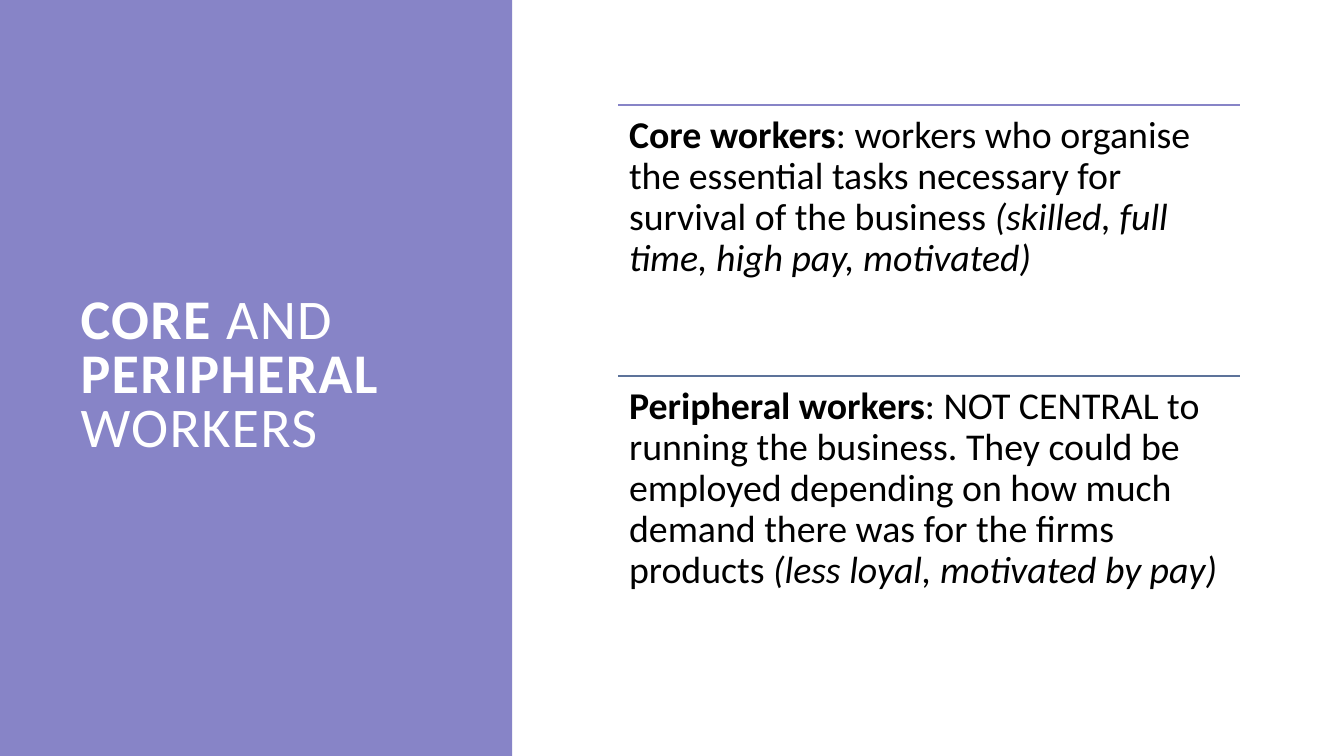
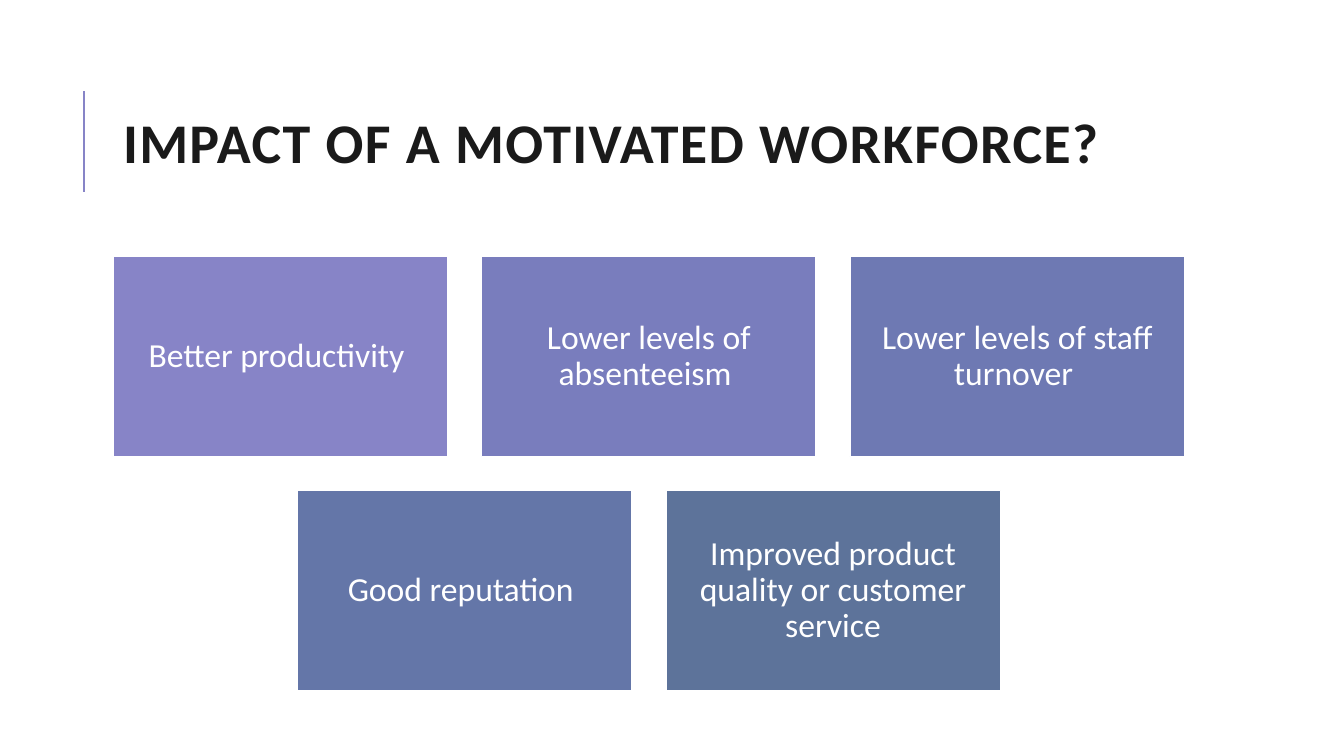
from dataclasses import dataclass

from lxml import etree
from pptx import Presentation
from pptx.dml.color import RGBColor
from pptx.enum import shapes, text
from pptx.oxml import ns
from pptx.util import Inches, Pt

FONT = "Calibri"
TITLE_ONLY = 5
COLORS = {
    "violet": "8784C7",
    "iris": "797DBD",
    "indigo": "6E79B3",
    "blue": "6476A8",
    "slate": "5D739A",
    "white": "FFFFFF",
    "black": "000000",
    "ink": "1A1A1A",
}


@dataclass(frozen=True)
class Box:
    left: float
    top: float
    width: float
    height: float

    def emu(self) -> tuple:
        return tuple(Inches(n) for n in (self.left, self.top, self.width, self.height))


@dataclass(frozen=True)
class Span:
    text: str
    bold: bool = False
    italic: bool = False


@dataclass(frozen=True)
class Style:
    size: int
    color: str
    line_spacing: float = 0.9
    align: text.PP_ALIGN = text.PP_ALIGN.LEFT
    anchor: text.MSO_ANCHOR = text.MSO_ANCHOR.MIDDLE
    inset: float = 0.1
    tracking: int = 0


@dataclass(frozen=True)
class Definition:
    color: str
    spans: tuple


@dataclass(frozen=True)
class Card:
    label: str
    color: str


DEFINITIONS = (
    Definition("violet", (
        Span("Core workers", bold=True),
        Span(": workers who organise the essential tasks necessary for "
             "survival of the business "),
        Span("(skilled, full time, high pay, motivated)", italic=True),
    )),
    Definition("slate", (
        Span("Peripheral workers", bold=True),
        Span(": NOT CENTRAL to running the business. They could be employed "
             "depending on how much demand there was for the firms products "),
        Span("(less loyal, motivated by pay)", italic=True),
    )),
)

CARD_ROWS = (
    (
        Card("Better productivity ", "violet"),
        Card("Lower levels of absenteeism ", "iris"),
        Card("Lower levels of staff turnover ", "indigo"),
    ),
    (
        Card("Good reputation ", "blue"),
        Card("Improved product quality or customer service", "slate"),
    ),
)


def rgb(name: str) -> RGBColor:
    return RGBColor.from_string(COLORS[name])


def write(shape, spans: tuple, style: Style) -> None:
    frame = shape.text_frame
    frame.word_wrap = True
    frame.auto_size = text.MSO_AUTO_SIZE.NONE
    frame.vertical_anchor = style.anchor
    frame.margin_left = frame.margin_right = Inches(style.inset)
    frame.margin_top = frame.margin_bottom = Inches(style.inset)
    paragraph = frame.paragraphs[0]
    paragraph.alignment = style.align
    paragraph.line_spacing = style.line_spacing
    for span in spans:
        run = paragraph.add_run()
        run.text = span.text
        font = run.font
        font.name = FONT
        font.size = Pt(style.size)
        font.color.rgb = rgb(style.color)
        font.bold = span.bold
        font.italic = span.italic
        if style.tracking:
            run._r.get_or_add_rPr().set("spc", str(style.tracking))


def add_title(slide, box: Box, spans: tuple, color: str) -> None:
    title = slide.shapes.title
    title.left, title.top, title.width, title.height = box.emu()
    write(title, spans, Style(40, color, line_spacing=0.8, tracking=100))
    slide.shapes._spTree.append(title._element)


def add_rectangle(slide, box: Box, fill: str, outline: str = ""):
    shape = slide.shapes.add_shape(shapes.MSO_SHAPE.RECTANGLE, *box.emu())
    shape.shadow.inherit = False
    shape.fill.solid()
    shape.fill.fore_color.rgb = rgb(fill)
    if outline:
        shape.line.color.rgb = rgb(outline)
        shape.line.width = Pt(1.25)
    else:
        shape.line.fill.background()
    return shape


def add_rule(slide, start: tuple, end: tuple, color: str, width: float) -> None:
    rule = slide.shapes.add_connector(
        shapes.MSO_CONNECTOR.STRAIGHT, *(Inches(n) for n in start + end))
    rule.line.color.rgb = rgb(color)
    rule.line.width = Pt(width)
    etree.SubElement(rule._element.spPr, ns.qn("a:effectLst"))


def build_worker_types(presentation) -> None:
    slide = presentation.slides.add_slide(presentation.slide_layouts[TITLE_ONLY])
    add_rectangle(slide, Box(0, 0, 5.08, 7.5), "violet")
    add_title(slide, Box(0.7, 0.7, 3.74, 6.09), (
        Span("CORE ", bold=True),
        Span("AND"),
        Span(" PERIPHERAL ", bold=True),
        Span("WORKERS"),
    ), "white")

    left, top, width, height = 6.13, 1.04, 6.17, 2.69
    style = Style(27, "black", anchor=text.MSO_ANCHOR.TOP, inset=0.11)
    for index, definition in enumerate(DEFINITIONS):
        box = Box(left, top + index * height, width, height)
        add_rule(slide, (left, box.top), (left + width, box.top),
                 definition.color, 1.25)
        write(slide.shapes.add_textbox(*box.emu()), definition.spans, style)


def build_motivation_impact(presentation) -> None:
    slide = presentation.slides.add_slide(presentation.slide_layouts[TITLE_ONLY])
    area = Box(1.12, 2.54, 10.63, 4.32)
    add_rule(slide, (0.83, 1.9), (0.83, 0.9), "violet", 1.5)
    add_title(slide, Box(area.left, 0.64, area.width, 1.64),
              (Span("IMPACT OF A MOTIVATED WORKFORCE?", bold=True),), "ink")

    width, height = 3.32, 1.99
    gap = (area.width - 3 * width) / 2
    style = Style(24, "white", align=text.PP_ALIGN.CENTER)
    for row, cards in enumerate(CARD_ROWS):
        row_width = len(cards) * (width + gap) - gap
        left = area.left + (area.width - row_width) / 2
        top = area.top + row * (height + gap)
        for column, card in enumerate(cards):
            box = Box(left + column * (width + gap), top, width, height)
            shape = add_rectangle(slide, box, card.color, "white")
            write(shape, (Span(card.label),), style)


def main() -> None:
    presentation = Presentation()
    presentation.slide_width = Inches(13.33)
    presentation.slide_height = Inches(7.5)
    build_worker_types(presentation)
    build_motivation_impact(presentation)
    presentation.save("out.pptx")


if __name__ == "__main__":
    main()
